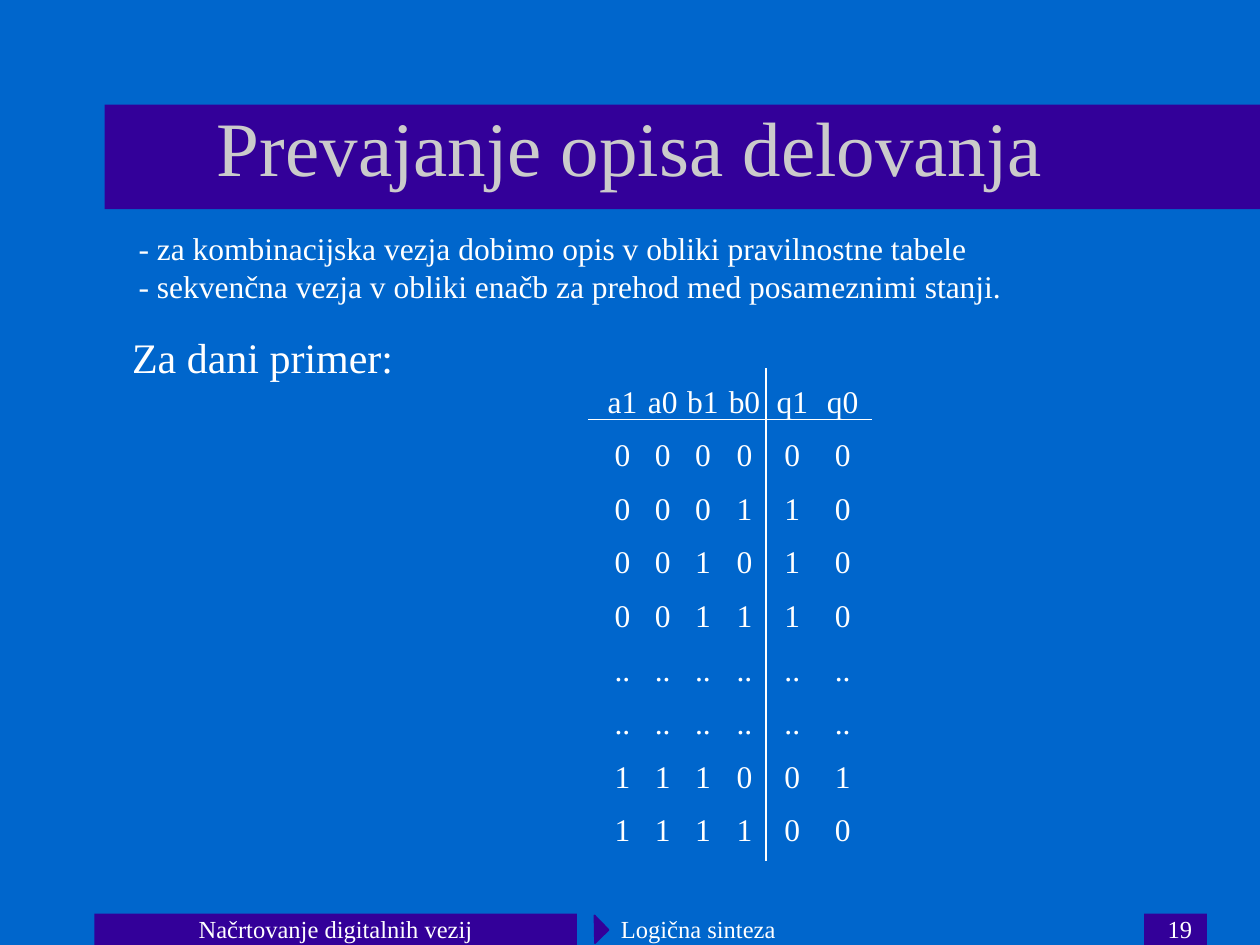
import dataclasses

import lxml.etree
import pptx
import pptx.dml.color
import pptx.enum.shapes
import pptx.enum.text
import pptx.oxml.ns
import pptx.util

Inches = pptx.util.Inches
Pt = pptx.util.Pt
Align = pptx.enum.text.PP_ALIGN
Anchor = pptx.enum.text.MSO_ANCHOR
Preset = pptx.enum.shapes.MSO_SHAPE
qn = pptx.oxml.ns.qn

NO_STYLE_NO_GRID = "{2D5ABB26-0587-4C30-8999-92F81FD0307C}"


@dataclasses.dataclass(frozen=True)
class Theme:
    font: str = "Times New Roman"
    background: str = "0066CC"
    band: str = "330099"
    title: str = "CBCBCB"
    text: str = "FFFFFF"
    title_size: int = 44
    heading_size: int = 24
    body_size: int = 18
    footer_size: int = 14
    line_width: int = 1


def rgb(code):
    return pptx.dml.color.RGBColor.from_string(code)


def place(shape, left, top, width, height):
    shape.left, shape.top = Inches(left), Inches(top)
    shape.width, shape.height = Inches(width), Inches(height)


class SlideBuilder:
    def __init__(self, slide, theme):
        self.slide = slide
        self.theme = theme
        fill = slide.background.fill
        fill.solid()
        fill.fore_color.rgb = rgb(theme.background)

    def set_text(self, frame, text, size, color=None, align=Align.LEFT):
        frame.text = text
        for paragraph in frame.paragraphs:
            paragraph.alignment = align
            for run in paragraph.runs:
                run.font.name = self.theme.font
                run.font.size = Pt(size)
                run.font.color.rgb = rgb(color or self.theme.text)

    def shape(self, preset, left, top, width, height, rotation=0):
        shape = self.slide.shapes.add_shape(
            preset, Inches(left), Inches(top), Inches(width), Inches(height))
        shape.shadow.inherit = False
        shape.fill.solid()
        shape.fill.fore_color.rgb = rgb(self.theme.band)
        shape.line.fill.background()
        shape.rotation = rotation
        return shape

    def title(self, text, *box):
        title = self.slide.shapes.title
        place(title, *box)
        title.text_frame.vertical_anchor = Anchor.MIDDLE
        self.set_text(title.text_frame, text, self.theme.title_size,
                      self.theme.title, Align.CENTER)
        self.to_front(title)

    def body(self, lines, *box):
        body = self.slide.placeholders[1]
        place(body, *box)
        frame = body.text_frame
        frame.auto_size = pptx.enum.text.MSO_AUTO_SIZE.NONE
        frame.vertical_anchor = Anchor.TOP
        self.set_text(frame, "\n".join(lines), self.theme.body_size)
        for paragraph in frame.paragraphs:
            paragraph.space_before = Pt(0)
            properties = paragraph._p.get_or_add_pPr()
            properties.set("marL", "0")
            properties.set("indent", "0")
            lxml.etree.SubElement(properties, qn("a:buNone"))
        self.to_front(body)

    def to_front(self, shape):
        self.slide.shapes._spTree.append(shape._element)

    def label(self, text, size, left, top, width, height, align=Align.LEFT):
        box = self.slide.shapes.add_textbox(
            Inches(left), Inches(top), Inches(width), Inches(height))
        box.text_frame.word_wrap = True
        box.text_frame.vertical_anchor = Anchor.MIDDLE
        self.set_text(box.text_frame, text, size, align=align)

    def table(self, rows, left, top, column_widths, row_height):
        """Add a table without fills or borders."""
        table = self.slide.shapes.add_table(
            len(rows), len(column_widths), Inches(left), Inches(top),
            Inches(sum(column_widths)), Inches(row_height * len(rows))).table
        table.first_row = table.horz_banding = False
        table._tbl.tblPr.find(qn("a:tableStyleId")).text = NO_STYLE_NO_GRID
        for column, width in zip(table.columns, column_widths):
            column.width = Inches(width)
        for row, values in zip(table.rows, rows):
            row.height = Inches(row_height)
            for cell, value in zip(row.cells, values):
                cell.fill.background()
                cell.margin_left = cell.margin_right = 0
                cell.margin_top = cell.margin_bottom = 0
                cell.vertical_anchor = Anchor.BOTTOM
                self.set_text(cell.text_frame, value, self.theme.body_size,
                              align=Align.CENTER)

    def line(self, x1, y1, x2, y2):
        line = self.slide.shapes.add_connector(
            pptx.enum.shapes.MSO_CONNECTOR.STRAIGHT,
            Inches(x1), Inches(y1), Inches(x2), Inches(y2))
        line.line.color.rgb = rgb(self.theme.text)
        line.line.width = Pt(self.theme.line_width)
        lxml.etree.SubElement(line._element.spPr, qn("a:effectLst"))


def main():
    presentation = pptx.Presentation()
    presentation.slide_width = Inches(10)
    presentation.slide_height = Inches(7.5)
    theme = Theme()
    page = SlideBuilder(
        presentation.slides.add_slide(presentation.slide_layouts[1]), theme)

    page.shape(Preset.RECTANGLE, 9.08, 7.25, 0.5, 0.25)
    page.shape(Preset.RECTANGLE, 0.75, 7.25, 3.83, 0.25)
    page.shape(Preset.RECTANGLE, 0.83, 0.83, 9.17, 0.83)
    marker = page.shape(Preset.RIGHT_TRIANGLE, 4.64, 7.3, 0.16, 0.15, 225.8)
    marker.line.color.rgb = rgb(theme.band)
    marker.line.width = Pt(theme.line_width)

    for text, left, width, align in (
            ("19", 7.48, 2.08, Align.RIGHT),
            ("Načrtovanje digitalnih vezij", 0.75, 3.83, Align.CENTER),
            ("Logična sinteza", 4.83, 3.83, Align.LEFT)):
        page.label(text, theme.footer_size, left, 7.21, width, 0.33, align)

    page.title("Prevajanje opisa delovanja", 0.75, 0.62, 8.5, 1.08)
    page.body([
        "- za kombinacijska vezja dobimo opis v obliki pravilnostne tabele",
        "- sekvenčna vezja v obliki enačb za prehod med posameznimi stanji.",
    ], 1, 1.77, 7.3, 0.75)
    page.label("Za dani primer:", theme.heading_size, 0.95, 2.58, 2.5, 0.5)

    truth_table = [["a1", "a0", "b1", "b0", "q1", "q0"]]
    truth_table += [list(bits) for bits in ("000000", "000110", "001010", "001110")]
    truth_table += [[".."] * 6] * 2
    truth_table += [list(bits) for bits in ("111001", "111100")]
    page.table(truth_table, 4.78, 2.91,
               [0.32, 0.32, 0.32, 0.34, 0.42, 0.38], 0.425)
    page.line(4.67, 3.33, 6.92, 3.33)
    page.line(6.08, 2.92, 6.08, 6.83)

    presentation.save("out.pptx")


if __name__ == "__main__":
    main()
